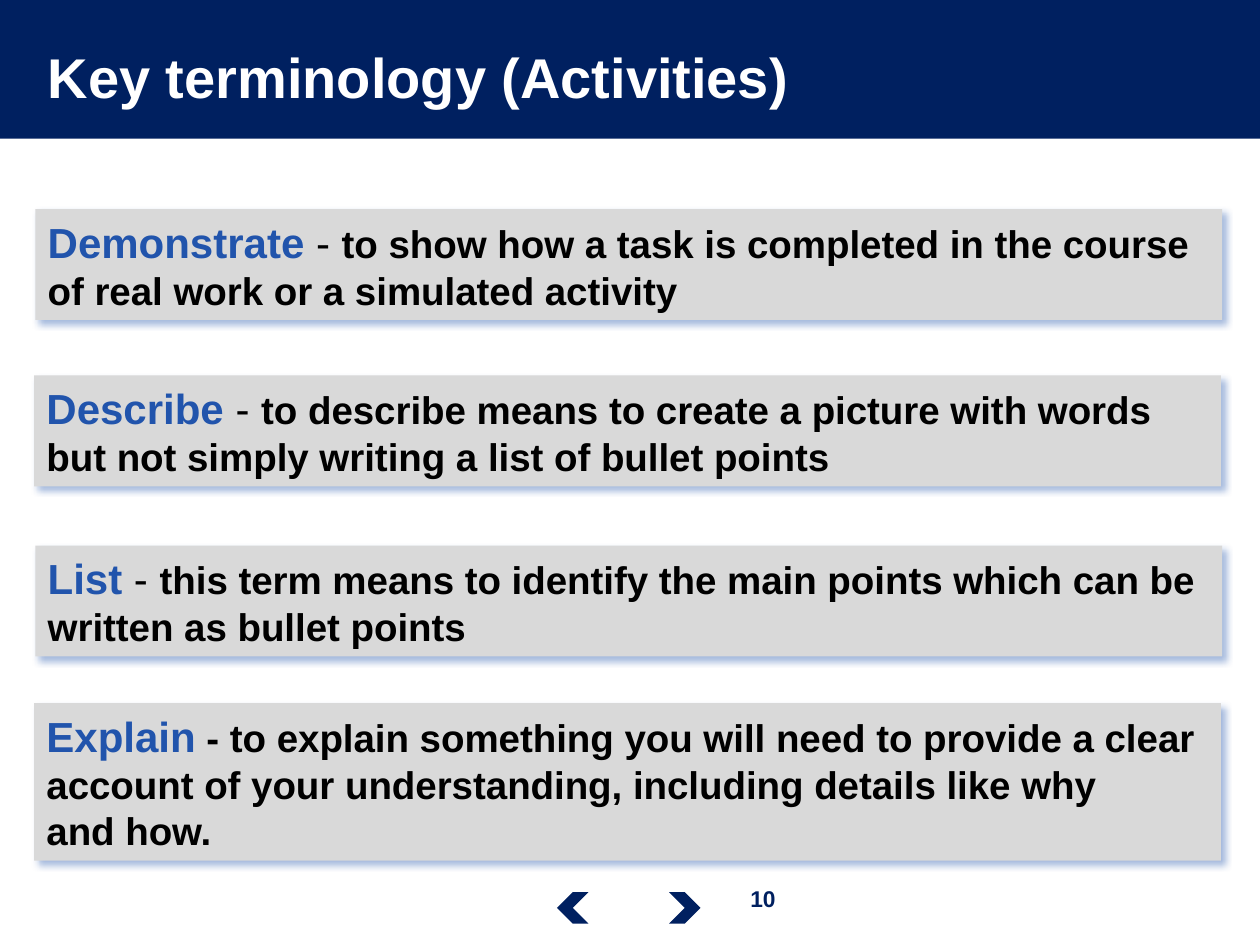
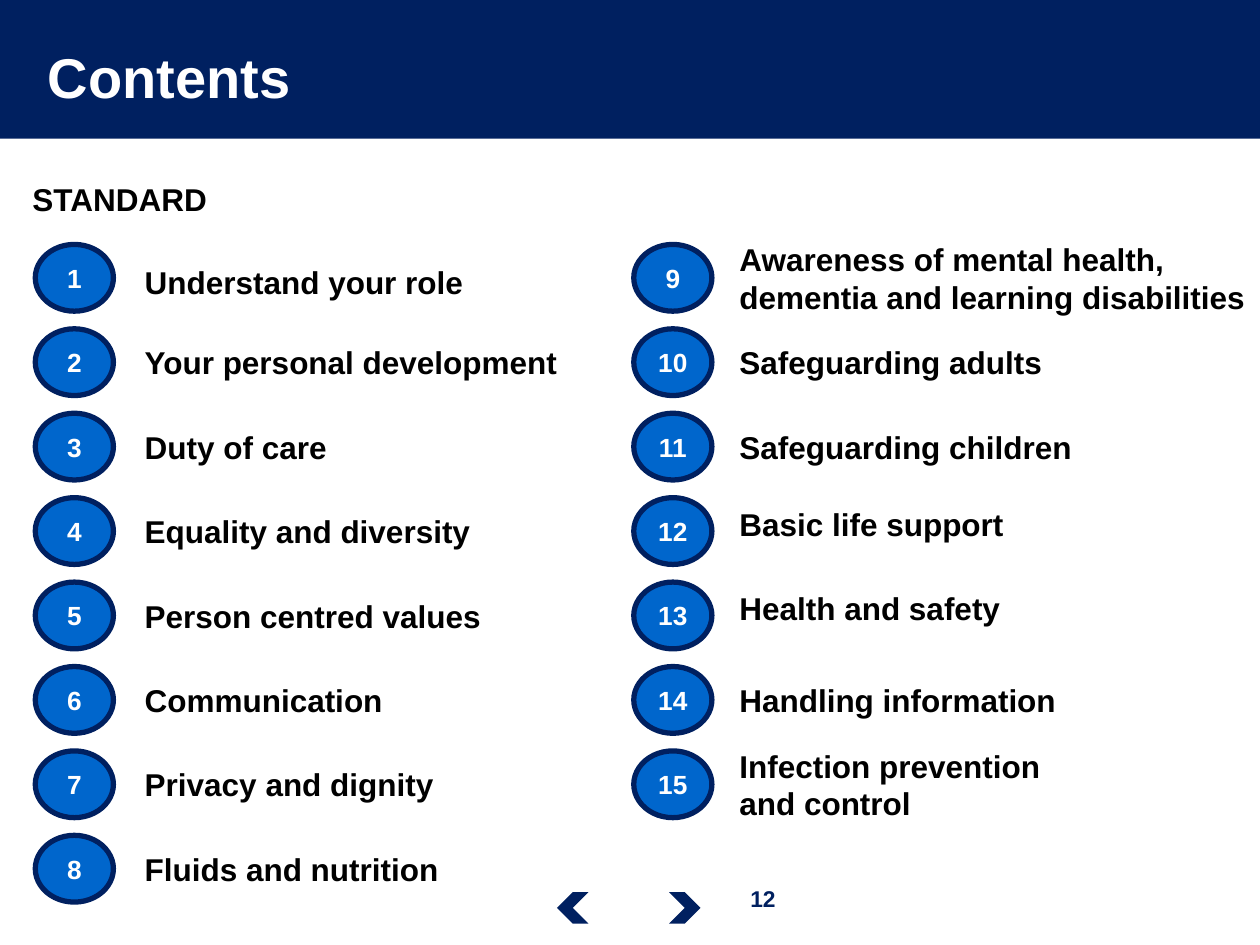
from lxml import etree
from pptx import Presentation
from pptx.dml.color import RGBColor
from pptx.enum.shapes import MSO_SHAPE
from pptx.enum.text import MSO_ANCHOR, PP_ALIGN
from pptx.oxml.ns import qn
from pptx.util import Inches, Pt

RECTANGLE, OVAL, CHEVRON = MSO_SHAPE.RECTANGLE, MSO_SHAPE.OVAL, MSO_SHAPE.CHEVRON
TOP, MIDDLE = MSO_ANCHOR.TOP, MSO_ANCHOR.MIDDLE
LEFT, CENTER = PP_ALIGN.LEFT, PP_ALIGN.CENTER

# Content
TERMS_TITLE, TERMS_NUMBER = "Key terminology (Activities)", 10
# term, dash, dash is bold, meaning, (left, top, height)
TERMS = [
    ("Demonstrate", " - ", False,
     "to show how a task is completed in the course of real work or a simulated activity",
     (0.28, 1.66, 0.88)),
    ("Describe", " - ", False,
     "to describe means to create a picture with words but not simply writing a list of bullet points",
     (0.27, 2.98, 0.88)),
    ("List", " - ", False,
     "this term means to identify the main points which can be written as bullet points",
     (0.28, 4.33, 0.88)),
    ("Explain", " - ", True,
     "to explain something you will need to provide a clear account of your understanding, "
     "including details like why \vand how.",
     (0.27, 5.58, 1.25)),
]

CONTENTS_TITLE, CONTENTS_NUMBER = "Contents", 12
CONTENTS_HEADING = "STANDARD"
STANDARDS_LEFT = [
    "Understand your role", "Your personal development", "Duty of care",
    "Equality and diversity", "Person centred values", "Communication",
    "Privacy and dignity", "Fluids and nutrition",
]
STANDARDS_RIGHT = [
    "Awareness of mental health, \vdementia and learning disabilities",
    "Safeguarding adults", "Safeguarding children", "Basic life support",
    "Health and safety", "Handling information", "Infection prevention \vand control",
]
# Labels that sit a little above or below the middle of their badge
LABEL_NUDGES = {"Understand your role": 0.03, "Basic life support": -0.06,
                "Health and safety": -0.06}

# Style
FONT = "Arial"
COLORS = {"navy": "002060", "term": "2154AC", "badge": "0066CC",
          "panel": "D9D9D9", "text": "000000", "white": "FFFFFF"}

# Grid of the contents slide: badge left, label left, label width
COLUMNS = [(STANDARDS_LEFT, 0.28, 1.05, 4.75), (STANDARDS_RIGHT, 5.03, 5.77, 4.97)]
BADGE_WIDTH, BADGE_HEIGHT = 0.62, 0.53
FIRST_BADGE_TOP, ROW_PITCH = 1.94, 0.67
LINE_HEIGHT, LABEL_PADDING = 0.3, 0.1


def color(name):
    return RGBColor.from_string(COLORS[name])


def style(font, size, color_name, bold=True):
    font.name, font.size, font.bold = FONT, Pt(size), bold
    font.color.rgb = color(color_name)


def add_block(page, kind, left, top, width, height, fill):
    shape = page.shapes.add_shape(kind, Inches(left), Inches(top), Inches(width), Inches(height))
    shape.shadow.inherit = False
    shape.fill.solid()
    shape.fill.fore_color.rgb = color(fill)
    shape.line.fill.background()
    return shape


def write(shape, text, size, color_name, align=LEFT, anchor=MIDDLE):
    frame = shape.text_frame
    frame.word_wrap = True
    frame.vertical_anchor = anchor
    para = frame.paragraphs[0]
    para.text = text
    para.alignment = align
    style(para.font, size, color_name)


def add_text(page, left, top, width, height, *text_style, **placing):
    box = page.shapes.add_textbox(Inches(left), Inches(top), Inches(width), Inches(height))
    write(box, *text_style, **placing)


def add_shadow(shape):
    effects = shape._element.spPr.find(qn("a:effectLst"))
    shadow = etree.SubElement(effects, qn("a:outerShdw"), blurRad=str(Pt(4)), dist=str(Pt(3)),
                              dir=str(45 * 60000), algn="tl", rotWithShape="0")
    tint = etree.SubElement(shadow, qn("a:srgbClr"), val=COLORS["term"])
    etree.SubElement(tint, qn("a:alpha"), val="40000")


def add_page(deck, title, number):
    """Blank slide with the title band, page number and navigation arrows."""
    page = deck.slides.add_slide(deck.slide_layouts[6])
    add_block(page, RECTANGLE, -0.02, 0, 10.02, 1.1, "navy")
    add_text(page, 5.7, 6.97, 0.71, 0.32, str(number), 13, "navy", align=CENTER, anchor=TOP)
    for left, rotation in ((5.31, 0), (4.42, 180)):
        add_block(page, CHEVRON, left, 7.08, 0.25, 0.25, "navy").rotation = rotation
    add_text(page, 0.28, 0.1, 7.9, 1.01, title, 32, "white")
    return page


def add_term(page, term, dash, dash_bold, meaning, place):
    left, top, height = place
    panel = add_block(page, RECTANGLE, left, top, 9.42, height, "panel")
    add_shadow(panel)
    write(panel, "", 22, "text")
    para = panel.text_frame.paragraphs[0]
    spans = [(term, 24, "term", True), (dash, 22 if dash_bold else 24, "text", dash_bold)]
    for index, line in enumerate(meaning.split("\v")):
        if index:
            spans.append(None)
        spans.append((line, 22, "text", True))
    for part in spans:
        if part is None:
            para.add_line_break()
            continue
        span = para.add_run()
        span.text = part[0]
        style(span.font, *part[1:])


def add_standard(page, number, label, row, badge_left, label_left, label_width):
    badge_top = FIRST_BADGE_TOP + row * ROW_PITCH
    badge = add_block(page, OVAL, badge_left, badge_top, BADGE_WIDTH, BADGE_HEIGHT, "badge")
    badge.line.color.rgb = color("navy")
    badge.line.width = Pt(3)
    write(badge, str(number), 15, "white", align=CENTER)
    badge.text_frame.margin_left = badge.text_frame.margin_right = 0

    height = LABEL_PADDING + LINE_HEIGHT * len(label.split("\v"))
    middle = badge_top + BADGE_HEIGHT / 2 + LABEL_NUDGES.get(label, 0)
    add_text(page, label_left, middle - height / 2, label_width, height, label, 18, "text")


def main():
    deck = Presentation()
    deck.slide_width, deck.slide_height = Inches(10), Inches(7.5)

    # Key terminology
    page = add_page(deck, TERMS_TITLE, TERMS_NUMBER)
    for term in TERMS:
        add_term(page, *term)

    # Contents
    page = add_page(deck, CONTENTS_TITLE, CONTENTS_NUMBER)
    add_text(page, 0.16, 1.38, 3.23, 0.4, CONTENTS_HEADING, 18, "text", anchor=TOP)
    number = 1
    for labels, *lefts_and_width in COLUMNS:
        for row, label in enumerate(labels):
            add_standard(page, number, label, row, *lefts_and_width)
            number += 1

    deck.save("out.pptx")


if __name__ == "__main__":
    main()
